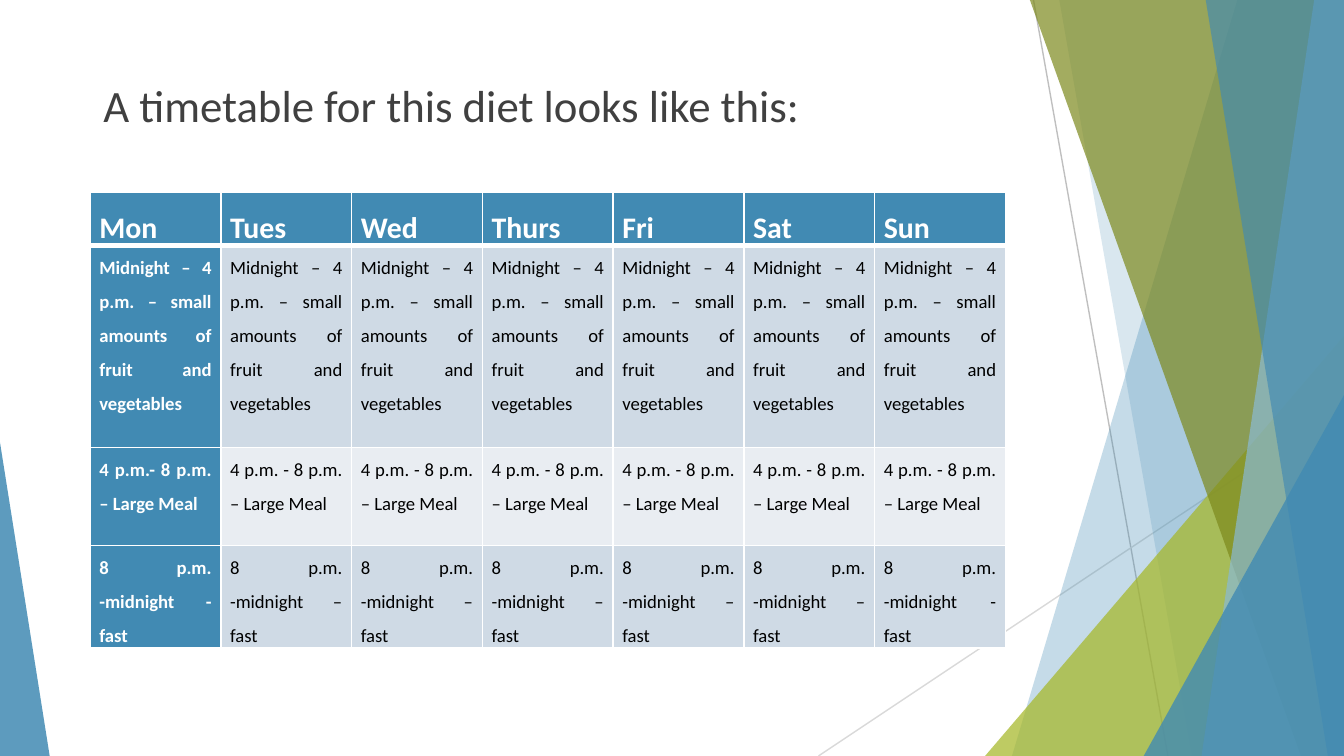
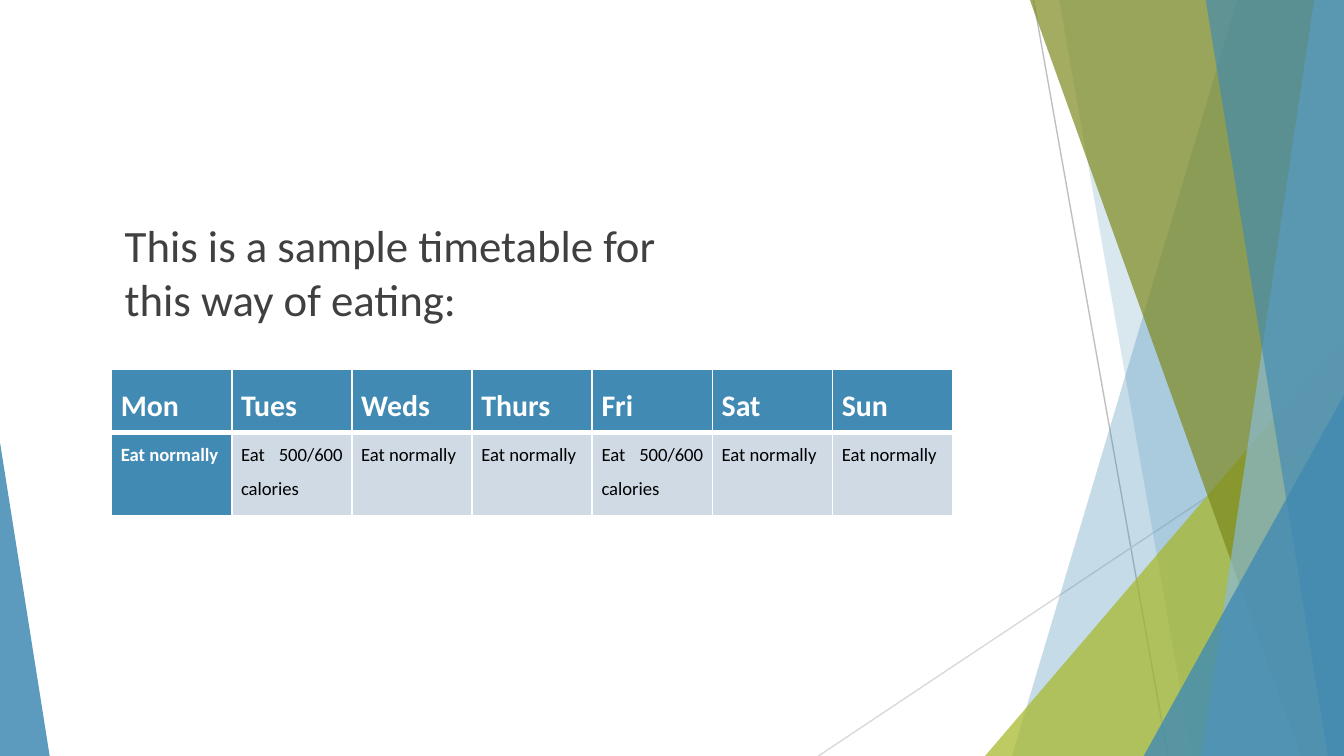
from dataclasses import dataclass

from lxml.etree import SubElement
from pptx import Presentation
from pptx.dml.color import RGBColor
from pptx.enum.shapes import MSO_CONNECTOR, MSO_SHAPE
from pptx.enum.text import MSO_ANCHOR, PP_ALIGN
from pptx.oxml import parse_xml
from pptx.oxml.ns import nsdecls, qn
from pptx.util import Inches, Pt


@dataclass(frozen=True)
class Theme:
    font: str = "Calibri"
    blue: str = "418AB3"
    sky: str = "8ABAD4"
    lime: str = "A6B727"
    olive: str = "7D891D"
    white: str = "FFFFFF"
    black: str = "000000"
    ink: str = "404040"
    gray: str = "BFBFBF"
    pale: str = "D9D9D9"
    bands: tuple = ("CFDAE5", "E9EDF2")
    title: int = 24
    head: int = 16
    body: int = 10


WIDTH = 10
HEIGHT = WIDTH * 9 / 16
TOP = -0.01


class Deck:
    def __init__(self, theme):
        self.theme = theme
        self.prs = Presentation()
        self.prs.slide_width = Inches(WIDTH)
        self.prs.slide_height = Inches(HEIGHT)
        self.slide = None

    def start(self):
        self.slide = self.prs.slides.add_slide(self.prs.slide_layouts[6])
        self.backdrop()

    def line(self, start, end, color):
        ends = [Inches(v) for v in (*start, *end)]
        link = self.slide.shapes.add_connector(MSO_CONNECTOR.STRAIGHT, *ends)
        link.line.color.rgb = RGBColor.from_string(color)
        link.line.width = Pt(0.75)
        SubElement(link._element.spPr, qn("a:effectLst"))

    def paint(self, shape, color, alpha):
        shape.shadow.inherit = False
        shape.line.fill.background()
        shape.fill.solid()
        shape.fill.fore_color.rgb = RGBColor.from_string(color)
        tint = shape._element.spPr.find(qn("a:solidFill"))[0]
        SubElement(tint, qn("a:alpha"), val=str(alpha * 1000))

    def shard(self, upper, lower, color, alpha):
        build = self.slide.shapes.build_freeform(Inches(upper), Inches(TOP))
        points = [(WIDTH, TOP), (WIDTH, HEIGHT), (lower, HEIGHT)]
        build.add_line_segments([(Inches(x), Inches(y)) for x, y in points])
        self.paint(build.convert_to_shape(), color, alpha)

    def wedge(self, left, top, width, tip, color, alpha):
        shape = self.slide.shapes.add_shape(
            MSO_SHAPE.ISOSCELES_TRIANGLE, Inches(left), Inches(top),
            Inches(width), Inches(HEIGHT - top))
        shape.adjustments[0] = tip
        self.paint(shape, color, alpha)

    def backdrop(self):
        t = self.theme
        self.line((7.69, 0), (8.69, HEIGHT), t.gray)
        self.line((WIDTH, 3.02), (6.09, HEIGHT), t.pale)
        self.shard(9.21, 7.53, t.blue, 30)
        self.shard(7.88, 8.87, t.blue, 20)
        self.wedge(7.33, 2.5, 2.67, 1, t.lime, 72)
        self.shard(7.66, 9.68, t.olive, 70)
        self.shard(9.78, 8.94, t.sky, 70)
        self.shard(8.97, 9.88, t.blue, 65)
        self.wedge(8.51, 2.94, 1.49, 1, t.blue, 80)
        self.wedge(0, 3.29, 0.37, 0, t.blue, 85)

    def style(self, para, size, color, bold=False):
        para.font.name = self.theme.font
        para.font.size = Pt(size)
        para.font.bold = bold
        para.font.color.rgb = RGBColor.from_string(color)

    def title(self, text, *place):
        box = self.slide.shapes.add_textbox(*[Inches(v) for v in place])
        frame = box.text_frame
        frame.word_wrap = True
        frame.vertical_anchor = MSO_ANCHOR.TOP
        para = frame.paragraphs[0]
        para.text = text
        para.space_before = Pt(7.5)
        self.style(para, self.theme.title, self.theme.ink)

    def border(self, cell, base):
        props = cell._tc.get_or_add_tcPr()
        sides = {"lnL": 1, "lnR": 1, "lnT": 1, "lnB": base}
        for spot, (side, width) in enumerate(sides.items()):
            props.insert(spot, parse_xml(
                f'<a:{side} {nsdecls("a")} w="{Pt(width)}"><a:solidFill>'
                f'<a:srgbClr val="{self.theme.white}"/></a:solidFill></a:{side}>'))

    def cell(self, cell, text, row, col):
        t = self.theme
        strong = row == 0 or col == 0
        cell.text = text
        cell.margin_left = cell.margin_right = Inches(0.07)
        cell.margin_top = cell.margin_bottom = 0
        cell.fill.solid()
        fill = t.blue if strong else t.bands[(row - 1) % 2]
        cell.fill.fore_color.rgb = RGBColor.from_string(fill)
        para = cell.text_frame.paragraphs[0]
        para.alignment = PP_ALIGN.JUSTIFY
        para.line_spacing = 1.5
        self.style(para, t.body if row else t.head,
                   t.white if strong else t.black, strong)
        self.border(cell, 1 if row else 3)

    def table(self, rows, left, top, width, heights):
        count = len(rows[0])
        grid = self.slide.shapes.add_table(
            len(rows), count, Inches(left), Inches(top),
            Inches(width), Inches(sum(heights))).table
        grid.first_col = True
        for col in grid.columns:
            col.width = Inches(width / count)
        for r, (texts, height) in enumerate(zip(rows, heights)):
            grid.rows[r].height = Inches(height)
            for c, text in enumerate(texts):
                self.cell(grid.cell(r, c), text, r, c)


def main():
    deck = Deck(Theme())

    deck.start()
    deck.title("A timetable for this diet looks like this:", 0.67, 0.53, 5.59, 0.71)
    days = ["Mon", "Tues", "Wed", "Thurs", "Fri", "Sat", "Sun"]
    fruit = "Midnight – 4 p.m. – small amounts of fruit and vegetables"
    fast = "8 p.m. -midnight - fast"
    rows = [
        days,
        [fruit] * 7,
        ["4 p.m.- 8 p.m. – Large Meal"] + ["4 p.m. - 8 p.m. – Large Meal"] * 6,
        [fast] + ["8 p.m. -midnight – fast"] * 5 + [fast],
    ]
    deck.table(rows, 0.67, 1.43, 6.81, [0.37, 1.5, 0.73, 0.76])

    deck.start()
    deck.title("This is a sample timetable for this way of eating:",
               0.83, 1.57, 4.57, 1.1)
    days = ["Weds" if day == "Wed" else day for day in days]
    light = {"Tues", "Fri"}
    meals = ["Eat 500/600 calories" if day in light else "Eat normally"
             for day in days]
    deck.table([days, meals], 0.83, 2.75, 6.26, [0.47, 0.62])

    deck.prs.save("out.pptx")


if __name__ == "__main__":
    main()
